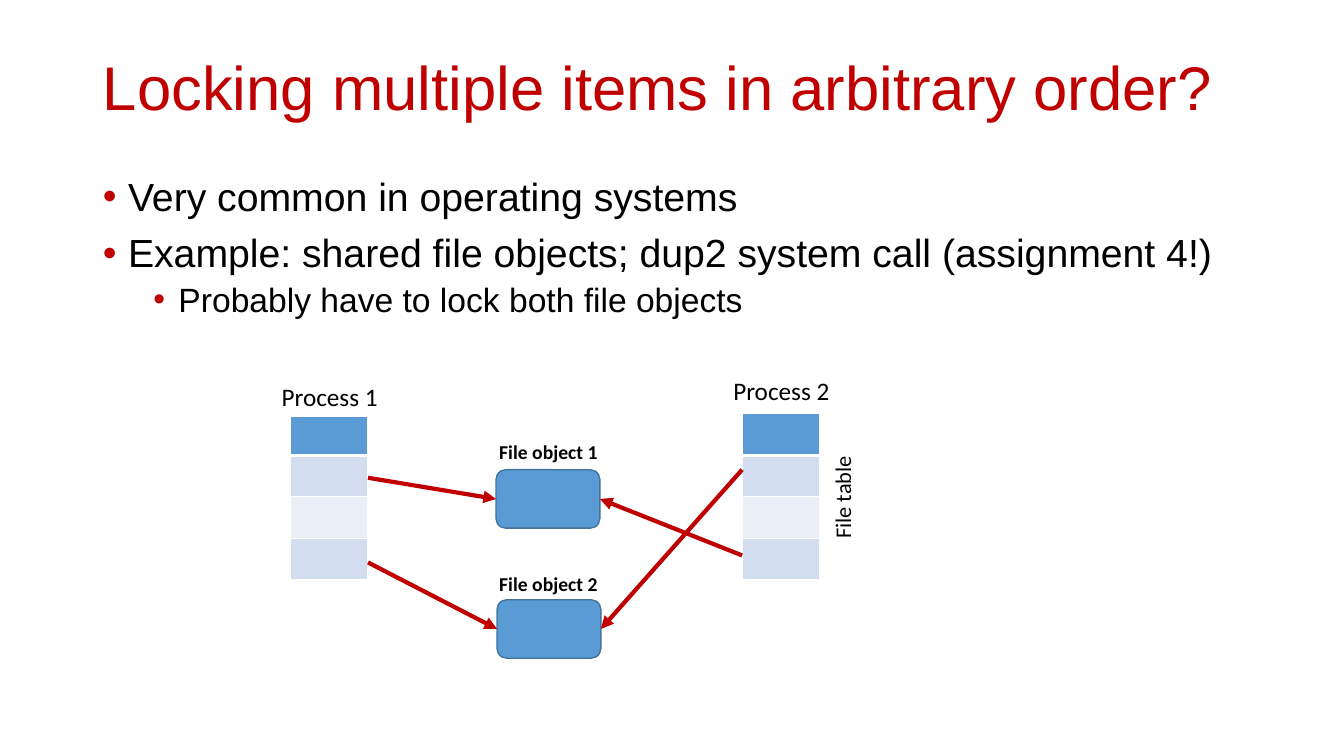
"""Builds the slide about locking shared file objects in arbitrary order."""
from dataclasses import dataclass

from lxml import etree
from pptx import Presentation
from pptx import util as u
from pptx.dml.color import RGBColor
from pptx.enum import shapes, text
from pptx.oxml import ns

PX = 9144


@dataclass(frozen=True)
class Theme:
    """Colours, fonts and type sizes of the slide."""
    accent: str = "C00000"
    ink: str = "000000"
    paper: str = "FFFFFF"
    box: str = "5B9BD5"
    edge: str = "43739E"
    rows: tuple = ("5B9BD5", "D2DEEF", "EAEFF7", "D2DEEF")
    heading_font: str = "Arial"
    label_font: str = "Calibri"
    title: int = 44
    levels: tuple = (28, 24)
    process: int = 18
    side: int = 16
    file: int = 14


def px(*lengths):
    """Turn pixel lengths into EMU."""
    return [u.Emu(n * PX) for n in lengths]


def rgb(color):
    """Turn a hex string into a colour."""
    return RGBColor.from_string(color)


def add_xml(parent, tag, **attrs):
    """Append a DrawingML element to its parent."""
    return etree.SubElement(parent, ns.qn(tag), attrs)


class Deck:
    """Draws each kind of element on the current slide."""

    def __init__(self, prs, theme):
        """Add a title and content slide."""
        self.theme = theme
        self.s = prs.slides.add_slide(prs.slide_layouts[1])

    def style(self, p, size, font, color, bold=False):
        """Format the runs of a paragraph."""
        for r in p.runs:
            r.font.size = u.Pt(size)
            r.font.name = font
            r.font.bold = bold
            r.font.color.rgb = rgb(color)

    def place(self, sp, box):
        """Move a placeholder and return its text frame."""
        sp.left, sp.top, sp.width, sp.height = px(*box)
        sp.text_frame.auto_size = text.MSO_AUTO_SIZE.NONE
        return sp.text_frame

    def title(self, words, box):
        """Fill the title placeholder."""
        tf = self.place(self.s.shapes.title, box)
        tf.text = words
        tf.vertical_anchor = text.MSO_ANCHOR.MIDDLE
        p = tf.paragraphs[0]
        p.alignment = text.PP_ALIGN.LEFT
        p.line_spacing = 0.9
        self.style(p, self.theme.title, self.theme.heading_font, self.theme.accent)

    def bullets(self, items, box):
        """Fill the body placeholder with (level, words) items."""
        tf = self.place(self.s.placeholders[1], box)
        tf.text = "\n".join(words for _, words in items)
        for p, (level, _) in zip(tf.paragraphs, items):
            p.level = level
            p.line_spacing = 0.9
            p.space_before = u.Pt(5 if level else 10)
            self.style(p, self.theme.levels[level], self.theme.heading_font, self.theme.ink)
            props = p._p.get_or_add_pPr()
            props.set("marL", str(u.Inches(0.25 + 0.5 * level)))
            props.set("indent", str(u.Inches(-0.25)))
            add_xml(add_xml(props, "a:buClr"), "a:srgbClr", val=self.theme.accent)
            add_xml(props, "a:buFont", typeface=self.theme.heading_font)
            add_xml(props, "a:buChar", char="•")

    def file_table(self, left, top, heights):
        """Add a one-column table with white rules."""
        frame = self.s.shapes.add_table(
            len(heights), 1, *px(left, top, 77, sum(heights)))
        table = frame.table
        for i, height in enumerate(heights):
            table.rows[i].height = px(height)[0]
            cell = table.cell(i, 0)
            cell.margin_top = cell.margin_bottom = 0
            widths = {"L": 1, "R": 1, "T": 3 if i == 1 else 1, "B": 3 if i == 0 else 1}
            for side, width in widths.items():
                ln = add_xml(cell._tc.get_or_add_tcPr(), f"a:ln{side}", w=str(u.Pt(width)))
                add_xml(add_xml(ln, "a:solidFill"), "a:srgbClr", val=self.theme.paper)
            cell.fill.solid()
            cell.fill.fore_color.rgb = rgb(self.theme.rows[i])

    def file_box(self, left, top):
        """Add a rounded box for a file object."""
        sp = self.s.shapes.add_shape(
            shapes.MSO_SHAPE.ROUNDED_RECTANGLE, *px(left, top, 103, 58))
        sp.shadow.inherit = False
        sp.fill.solid()
        sp.fill.fore_color.rgb = rgb(self.theme.box)
        sp.line.color.rgb = rgb(self.theme.edge)
        sp.line.width = u.Pt(1)

    def arrow(self, start, end):
        """Add an arrow from a table row to a file object."""
        line = self.s.shapes.add_connector(
            shapes.MSO_CONNECTOR.STRAIGHT, *px(*start, *end))
        line.line.color.rgb = rgb(self.theme.accent)
        line.line.width = u.Pt(3)
        add_xml(line.line._get_or_add_ln(), "a:tailEnd", type="triangle")
        add_xml(line._element.spPr, "a:effectLst")

    def label(self, words, box, size, bold=False, rotation=0):
        """Add a centred text box."""
        sp = self.s.shapes.add_textbox(*px(*box))
        sp.rotation = rotation
        tf = sp.text_frame
        tf.word_wrap = True
        tf.text = words
        p = tf.paragraphs[0]
        p.alignment = text.PP_ALIGN.CENTER
        self.style(p, size, self.theme.label_font, self.theme.ink, bold)


def main():
    """Build and save the slide."""
    prs = Presentation()
    prs.slide_width, prs.slide_height = u.Inches(13.33), u.Inches(7.5)
    theme = Theme()
    deck = Deck(prs, theme)
    deck.title("Locking multiple items in arbitrary order?", (92, 17, 1150, 145))
    deck.bullets([
        (0, "Very common in operating systems"),
        (0, "Example: shared file objects; dup2 system call (assignment 4!)"),
        (1, "Probably have to lock both file objects"),
    ], (92, 171, 1150, 165))

    deck.file_table(288, 413, (39, 41, 41, 41))
    deck.file_table(736, 410, (42, 41, 41, 41))
    for left, top in ((492, 466), (493, 595)):
        deck.file_box(left, top)
    for start, end in (
        ((365, 558), (493, 624)),
        ((365, 474), (492, 495)),
        ((736, 466), (596, 624)),
        ((736, 551), (595, 495)),
    ):
        deck.arrow(start, end)

    for n, (left, top) in enumerate(((266, 373), (714, 367)), 1):
        deck.label(f"Process {n}", (left, top, 122, 40), theme.process)
    deck.label("File table", (749, 475, 173, 37), theme.side, rotation=270)
    for n, top in enumerate((432, 562), 1):
        deck.label(f"File object {n}", (483, top, 122, 34), theme.file, bold=True)
    prs.save("out.pptx")


if __name__ == "__main__":
    main()
